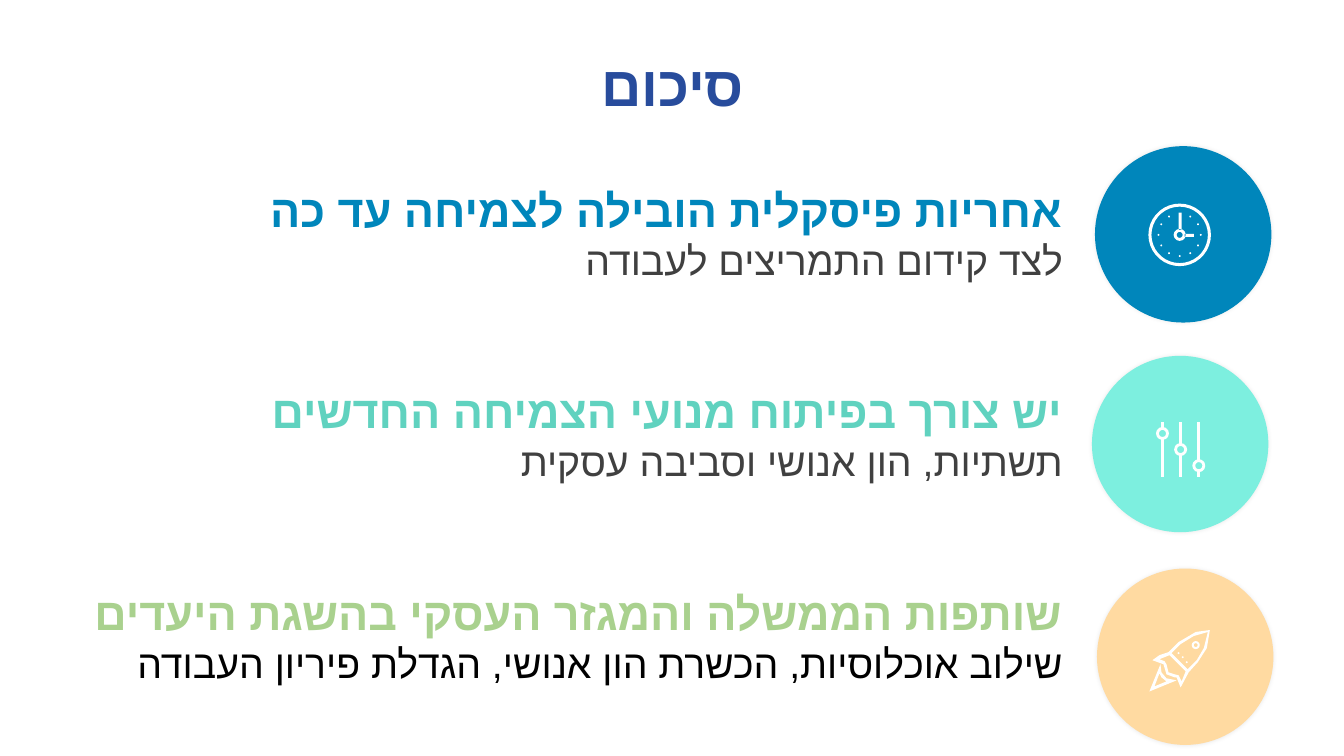
"""Build the closing summary slide with three points and their round icons."""
import math
import lxml.etree
import pptx
import pptx.dml.color
import pptx.enum.lang
import pptx.enum.shapes
import pptx.enum.text
import pptx.oxml.ns
import pptx.util

TITLE = "סיכום"
POINTS = [
    {"head": "אחריות פיסקלית הובילה לצמיחה עד כה",
     "body": "לצד קידום התמריצים לעבודה",
     "ink": "0086BB", "tone": "404040", "disc": "0086BB", "at": (10.86, 1.45)},
    {"head": "יש צורך בפיתוח מנועי הצמיחה החדשים",
     "body": "תשתיות, הון אנושי וסביבה עסקית",
     "ink": "60D2BF", "tone": "404040", "disc": "7DEFDF", "at": (10.83, 3.53)},
    {"head": "שותפות הממשלה והמגזר העסקי בהשגת היעדים",
     "body": "שילוב אוכלוסיות, הכשרת הון אנושי, הגדלת פיריון העבודה",
     "ink": "A9D18E", "tone": "000000", "disc": "FFDAA1", "at": (10.88, 5.64)},
]
CLOCK = (11.7, 2.33)
KNOBS = [(11.53, 4.3), (11.71, 4.46), (11.89, 4.62)]
TRACK = (4.19, 4.73)
SHELL = [(12, 6.25), (11.86, 6.27), (11.69, 6.37), (11.59, 6.47), (11.5, 6.5),
         (11.43, 6.55), (11.54, 6.59), (11.57, 6.69), (11.65, 6.72), (11.67, 6.72),
         (11.71, 6.82), (11.79, 6.67), (11.88, 6.57), (11.97, 6.43)]
CABIN = [(11.98, 6.27), (11.84, 6.31), (11.71, 6.39), (11.62, 6.48), (11.78, 6.64),
         (11.87, 6.55), (11.94, 6.43)]
FINS = [(11.76, 6.66), (11.72, 6.76), (11.69, 6.7), (11.65, 6.69), (11.59, 6.67),
        (11.57, 6.59), (11.55, 6.56), (11.5, 6.54), (11.6, 6.5)]
FLAME = [(11.51, 6.59), (11.4, 6.86), (11.67, 6.75), (11.57, 6.73), (11.52, 6.67)]
SPARK = [(11.45, 6.81), (11.5, 6.68), (11.52, 6.72), (11.57, 6.76)]
PORT = (11.86, 6.4)
RIVETS = [(11.69, 6.48), (11.73, 6.52), (11.77, 6.57)]
THEME = {"font": "Lato", "script": "Arial", "title": 40, "head": 32, "body": 28,
         "navy": "284C9C", "icon": "FFFFFF", "line": 2, "shade": "000000"}

Inches = pptx.util.Inches
Pt = pptx.util.Pt
Align = pptx.enum.text.PP_ALIGN
Kind = pptx.enum.shapes.MSO_SHAPE

deck = pptx.Presentation()
deck.slide_width, deck.slide_height = Inches(13.33), Inches(7.5)
slide = deck.slides.add_slide(deck.slide_layouts[6])
shapes = slide.shapes


def color(code):
    """Turn a hex code into a colour."""
    return pptx.dml.color.RGBColor.from_string(code)


def add_tag(parent, name, **attrs):
    """Append a drawing element with the given attributes."""
    node = lxml.etree.SubElement(parent, pptx.oxml.ns.qn(name))
    for key, value in attrs.items():
        node.set(key, str(value))
    return node


def add_text(para, text, size, ink, bold=False, align=Align.RIGHT):
    """Write one right-to-left line in a paragraph."""
    para.alignment = align
    para._p.get_or_add_pPr().set("rtl", "1")
    run = para.add_run()
    run.text = text
    font = run.font
    font.name, font.size, font.bold = THEME["font"], Pt(size), bold
    font.color.rgb = color(ink)
    font.language_id = pptx.enum.lang.MSO_LANGUAGE_ID.HEBREW
    add_tag(run._r.get_or_add_rPr(), "a:cs", typeface=THEME["script"])


def add_box(left, top, width, height):
    """Add a wrapping text box and return its frame."""
    box = shapes.add_textbox(*map(Inches, (left, top, width, height)))
    box.text_frame.word_wrap = True
    return box.text_frame


def paint(shape, fill=None, line=None):
    """Set fill and line, and drop the shadow."""
    shape.shadow.inherit = False
    if fill:
        shape.fill.solid()
        shape.fill.fore_color.rgb = color(fill)
    else:
        shape.fill.background()
    if line:
        shape.line.color.rgb = color(line)
        shape.line.width = Pt(THEME["line"])
    else:
        shape.line.fill.background()


def add_round(center, radius, **look):
    """Add a circle about a centre."""
    x, y = center
    size = Inches(2 * radius)
    disc = shapes.add_shape(Kind.OVAL, Inches(x - radius), Inches(y - radius), size, size)
    paint(disc, **look)
    return disc


def add_line(start, end):
    """Add a straight icon stroke."""
    line = shapes.add_connector(pptx.enum.shapes.MSO_CONNECTOR.STRAIGHT,
                                *map(Inches, start + end))
    line.line.color.rgb = color(THEME["icon"])
    line.line.width = Pt(THEME["line"])
    add_tag(line._element.spPr, "a:effectLst")


def ring(center, radius, count):
    """Return evenly spaced points on a circle, clockwise from the top."""
    x, y = center
    turns = [2 * math.pi * step / count for step in range(count)]
    return [(x + radius * math.sin(turn), y - radius * math.cos(turn)) for turn in turns]


def bar(left, top, right, bottom):
    """Return the corners of a rectangle."""
    return [(left, top), (right, top), (right, bottom), (left, bottom)]


def add_icon(*loops):
    """Add one filled outline whose inner loops are holes."""
    paths = [[(Inches(x), Inches(y)) for x, y in loop] for loop in loops]
    build = shapes.build_freeform(*paths[0][0])
    for path in paths:
        build.move_to(*path[0])
        build.add_line_segments(path[1:], close=True)
    paint(build.convert_to_shape(), fill=THEME["icon"])


frame = add_box(0.57, 0.45, 12.2, 1.25)
add_text(frame.paragraphs[0], TITLE, THEME["title"], THEME["navy"],
         bold=True, align=Align.CENTER)

for row, point in enumerate(POINTS):
    frame = add_box(0.11, 1.76 + 2 * row, 10.53, 1.11)
    add_text(frame.paragraphs[0], point["head"], THEME["head"], point["ink"], bold=True)
    add_text(frame.add_paragraph(), point["body"], THEME["body"], point["tone"])
    left, top = point["at"]
    half = 1.75 / 2
    disc = add_round((left + half, top + half), half, fill=point["disc"])
    glow = disc._element.spPr.find(pptx.oxml.ns.qn("a:effectLst"))
    shade = add_tag(glow, "a:outerShdw", blurRad=Pt(3), dist=0, dir=0, algn="ctr")
    tint = add_tag(shade, "a:srgbClr", val=THEME["shade"])
    add_tag(tint, "a:alpha", val=7000)

cx, cy = CLOCK
hands = [bar(cx - 0.01, cy - 0.22, cx + 0.02, cy - 0.05),
         bar(cx + 0.05, cy - 0.01, cx + 0.14, cy + 0.02)]
hours = [ring(spot, 0.01, 6) for spot in ring(CLOCK, 0.21, 12)[1:]]
add_icon(ring(CLOCK, 0.31, 36), ring(CLOCK, 0.28, 36), ring(CLOCK, 0.06, 12),
         ring(CLOCK, 0.03, 12), *hands, *hours)

high, low = TRACK
for x, y in KNOBS:
    add_round((x, y), 0.05, line=THEME["icon"])
    add_line((x, high), (x, y - 0.05))
    add_line((x, y + 0.05), (x, low))

add_icon(SHELL, CABIN, FINS, FLAME, SPARK, ring(PORT, 0.04, 12), ring(PORT, 0.02, 8),
         *[ring(spot, 0.01, 6) for spot in RIVETS])

deck.save("out.pptx")
